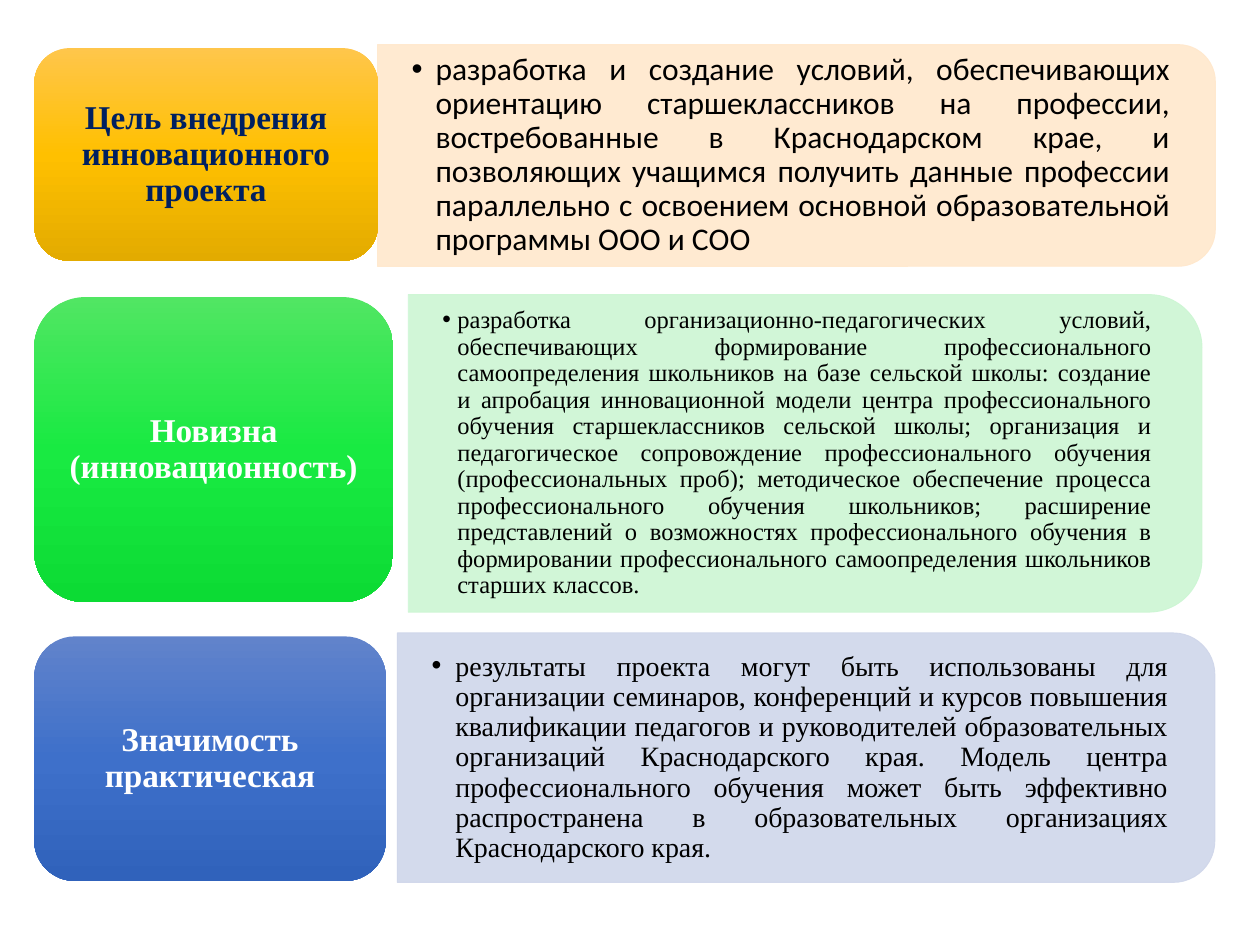
from lxml.etree import SubElement
from pptx import Presentation
from pptx.dml.color import RGBColor
from pptx.enum.shapes import MSO_SHAPE as SHAPE
from pptx.enum.text import MSO_ANCHOR as ANCHOR, MSO_AUTO_SIZE as AUTO, PP_ALIGN as ALIGN
from pptx.oxml.ns import qn
from pptx.util import Cm, Pt

BLACK = RGBColor(0x00, 0x00, 0x00)
WHITE = RGBColor(0xFF, 0xFF, 0xFF)
NAVY = RGBColor(0x00, 0x20, 0x60)
PEACH = RGBColor(0xFF, 0xE8, 0xCC)
MINT = RGBColor(0xCC, 0xF6, 0xD3)
LAVENDER = RGBColor(0xCF, 0xD6, 0xEA)
GOLD = [RGBColor(0xFF, 0xC6, 0x4B), RGBColor(0xFF, 0xC0, 0x00), RGBColor(0xE3, 0xAB, 0x00)]
GREEN = [RGBColor(0x51, 0xE6, 0x63), RGBColor(0x19, 0xEA, 0x42), RGBColor(0x0C, 0xDB, 0x34)]
BLUE = [RGBColor(0x61, 0x83, 0xCB), RGBColor(0x3E, 0x70, 0xCA), RGBColor(0x30, 0x62, 0xBB)]

SERIF, SANS = "Times New Roman", "Calibri"
LABEL_LEFT = 0.69
CORNER_INSET = 0.05  # share of a panel's height that its round corners take from the text

# Boxes are (left, top, width, height) in cm; ph is the body placeholder's index
ROWS = [
    dict(label="Цель внедрения инновационного проекта", label_box=(LABEL_LEFT, 0.97, 6.93, 4.29),
         label_color=NAVY, gradient=GOLD, panel_box=(7.61, 0.9, 16.89, 4.47), tint=PEACH,
         ph=1, size=18, font=SANS, indent=0.48,
         body="разработка и создание условий, обеспечивающих ориентацию старшеклассников "
              "на профессии, востребованные в Краснодарском крае, и позволяющих учащимся "
              "получить данные профессии параллельно с освоением основной образовательной "
              "программы ООО и СОО"),
    dict(label="Новизна (инновационность)", label_box=(LABEL_LEFT, 5.99, 7.24, 6.15),
         label_color=WHITE, gradient=GREEN, panel_box=(8.23, 5.94, 16, 6.4), tint=MINT,
         ph=2, size=14, font=SERIF, indent=0.3,
         body="разработка организационно-педагогических условий, обеспечивающих формирование "
              "профессионального самоопределения школьников на базе сельской школы: создание "
              "и апробация инновационной модели центра профессионального обучения "
              "старшеклассников сельской школы; организация и педагогическое сопровождение "
              "профессионального обучения (профессиональных проб); методическое обеспечение "
              "процесса профессионального обучения школьников; расширение представлений о "
              "возможностях профессионального обучения в формировании профессионального "
              "самоопределения школьников старших классов."),
    dict(label="Значимость практическая", label_box=(LABEL_LEFT, 12.83, 7.09, 4.93),
         label_color=WHITE, gradient=BLUE, panel_box=(8.01, 12.76, 16.48, 5.03), tint=LAVENDER,
         ph=4, size=16, font=SERIF, indent=0.48,
         body="результаты проекта могут быть использованы для организации семинаров, "
              "конференций и курсов повышения квалификации педагогов и руководителей "
              "образовательных организаций Краснодарского края. Модель центра "
              "профессионального обучения может быть эффективно распространена в "
              "образовательных организациях Краснодарского края."),
]


def write_text(sp, text, *, size, font, color, bold=False, align=ALIGN.CENTER,
               margins=(0.2, 0.1), bullet_indent=None):
    """Put one formatted paragraph in a shape; an indent makes it a bullet."""
    tf = sp.text_frame
    tf.word_wrap = True
    tf.auto_size = AUTO.NONE
    tf.vertical_anchor = ANCHOR.MIDDLE
    tf.margin_left = tf.margin_right = Cm(margins[0])
    tf.margin_top = tf.margin_bottom = Cm(margins[1])
    p = tf.paragraphs[0]
    p.alignment = align
    p.line_spacing = 0.9
    p.space_before = p.space_after = Pt(0)
    r = p.add_run()
    r.text = text
    r.font.name, r.font.size, r.font.bold = font, Pt(size), bold
    r.font.color.rgb = color
    if bullet_indent is not None:
        p.level = 1
        pPr = p._p.get_or_add_pPr()
        pPr.set("marL", str(Cm(bullet_indent)))
        pPr.set("indent", str(-Cm(bullet_indent)))
        SubElement(pPr, qn("a:buFont"), typeface="Arial")
        SubElement(pPr, qn("a:buChar"), char="•")


def add_panel(slide, box, color):
    """Add a translucent panel whose two rounded corners face right."""
    left, top, width, height = box
    # The preset rounds its top, so it is drawn upright and turned about its centre
    sp = slide.shapes.add_shape(
        SHAPE.ROUND_2_SAME_RECTANGLE, Cm(left + (width - height) / 2),
        Cm(top + (height - width) / 2), Cm(height), Cm(width))
    sp.rotation = 90
    sp.shadow.inherit = False
    sp.line.width = Pt(0.5)
    for fill in (sp.fill, sp.line.fill):
        fill.solid()
        fill.fore_color.rgb = color
    for clr in sp._element.spPr.iter(qn("a:srgbClr")):
        SubElement(clr, qn("a:alpha"), val="90000")


def place_body(slide, row):
    """Lay a body placeholder over its panel and fill it with the bullet."""
    left, top, width, height = row["panel_box"]
    inset = height * CORNER_INSET
    sp = next(s for s in slide.placeholders if s.placeholder_format.idx == row["ph"])
    sp.left, sp.top = Cm(left), Cm(top + inset)
    sp.width, sp.height = Cm(width - inset), Cm(height - 2 * inset)
    slide.shapes._spTree.append(sp._element)  # bring in front of the panel
    write_text(sp, row["body"], size=row["size"], font=row["font"], color=BLACK,
               align=ALIGN.JUSTIFY, margins=(0.69, 0.36), bullet_indent=row["indent"])


def add_label(slide, row):
    """Add a rounded label with a vertical three-stop gradient."""
    sp = slide.shapes.add_shape(SHAPE.ROUNDED_RECTANGLE, *map(Cm, row["label_box"]))
    sp.shadow.inherit = False
    sp.line.fill.background()
    sp.fill.gradient()
    grad = sp._element.spPr.find(qn("a:gradFill"))
    stops = grad.find(qn("a:gsLst"))
    stops.clear()
    for pos, color in zip((0, 50000, 100000), row["gradient"]):
        gs = SubElement(stops, qn("a:gs"), pos=str(pos))
        SubElement(gs, qn("a:srgbClr"), val=str(color))
    grad.find(qn("a:lin")).set("ang", "5400000")
    write_text(sp, row["label"], size=19, font=SERIF, color=row["label_color"], bold=True)


def main():
    prs = Presentation()
    prs.slide_width, prs.slide_height = Cm(25.4), Cm(19.05)
    slide = prs.slides.add_slide(prs.slide_layouts[4])

    # Rows: panel, its bullet, then the label on the left
    for row in ROWS:
        add_panel(slide, row["panel_box"], row["tint"])
        place_body(slide, row)
        add_label(slide, row)

    # Unused placeholders
    for sp in list(slide.placeholders):
        if not sp.text_frame.text:
            sp._element.getparent().remove(sp._element)

    prs.save("out.pptx")


if __name__ == "__main__":
    main()
